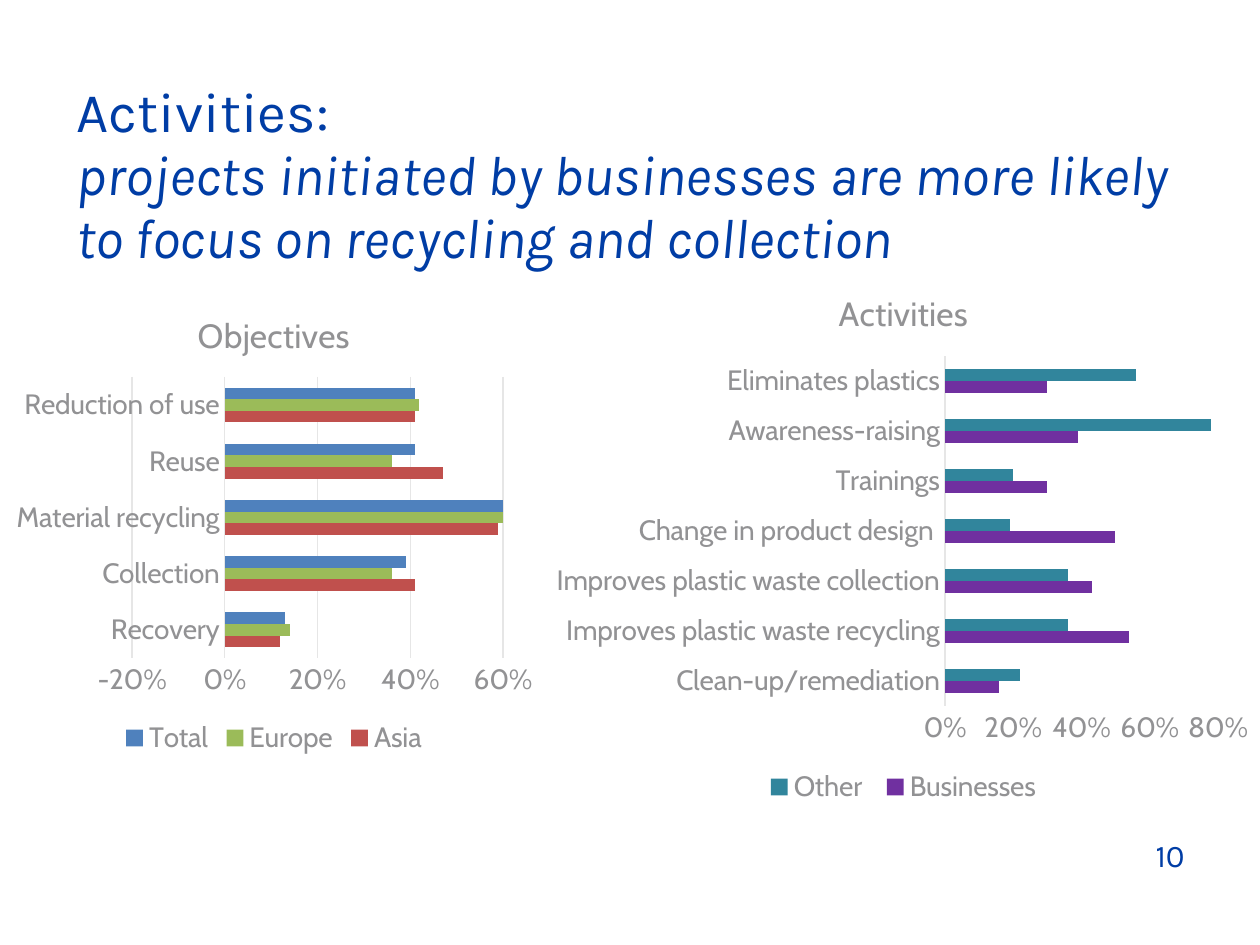
"""Build the slide comparing project objectives and activities in two bar charts."""
from lxml import etree
from pptx import Presentation, util as u
from pptx.chart.data import CategoryChartData
from pptx.dml.color import RGBColor
from pptx.enum import chart as ch, text
from pptx.oxml import ns

PX_PER_INCH = 126
BLUE = RGBColor(0x00, 0x3D, 0xA5)
GREY = RGBColor(0x92, 0x92, 0x94)
RULE = RGBColor(0xE6, 0xE6, 0xE6)
ASIA = RGBColor(0xC0, 0x50, 0x4D)
EUROPE = RGBColor(0x9B, 0xBB, 0x59)
TOTAL = RGBColor(0x4F, 0x81, 0xBD)
BUSINESSES = RGBColor(0x70, 0x30, 0xA0)
OTHER = RGBColor(0x31, 0x85, 0x9C)

OBJECTIVES = dict(
    title="Objectives", box=(5, 290, 538, 470), plot=(132, 377, 371, 281),
    scale=dict(minimum_scale=-0.2, maximum_scale=0.6, major_unit=0.2),
    gap=182, grid=True,
    categories=["Recovery", "Collection", "Material recycling", "Reuse", "Reduction of use"],
    series=[("Asia", ASIA, (0.12, 0.41, 0.59, 0.47, 0.41)),
            ("Europe", EUROPE, (0.14, 0.36, 0.61, 0.36, 0.42)),
            ("Total", TOTAL, (0.13, 0.39, 0.6, 0.41, 0.41))])
ACTIVITIES = dict(
    title="Activities", box=(543, 266, 721, 543), plot=(945, 356, 273, 350),
    scale=dict(minimum_scale=0, maximum_scale=0.8, major_unit=0.2),
    gap=219, grid=False,
    categories=["Clean-up/remediation", "Improves plastic waste recycling",
                "Improves plastic waste collection", "Change in product design ",
                "Trainings", "Awareness-raising", "Eliminates plastics"],
    series=[("Businesses", BUSINESSES, (0.16, 0.54, 0.43, 0.5, 0.3, 0.39, 0.3)),
            ("Other ", OTHER, (0.22, 0.36, 0.36, 0.19, 0.2, 0.78, 0.56))])


def px(length):
    """Turn pixels into EMU."""
    return u.Inches(length / PX_PER_INCH)


def apply(target, values):
    """Set each named attribute on the target."""
    for name, value in values.items():
        setattr(target, name, value)


def set_font(font, name, size, color, **style):
    """Give a font its face, size, colour and style."""
    apply(font, dict(name=name, size=u.Pt(size), **style))
    font.color.rgb = color


def set_line(line, color):
    """Draw a thin line in the given colour."""
    line.color.rgb = color
    line.width = u.Pt(0.75)


def add_title(slide, heading, finding):
    """Fill the title placeholder with a heading and an italic finding."""
    title = slide.shapes.title
    apply(title, dict(left=px(64), top=px(97), width=px(1132), height=px(157)))
    frame = title.text_frame
    apply(frame, dict(word_wrap=True, auto_size=text.MSO_AUTO_SIZE.NONE,
                      vertical_anchor=text.MSO_ANCHOR.MIDDLE))
    paragraph = frame.paragraphs[0]
    apply(paragraph, dict(alignment=text.PP_ALIGN.LEFT, line_spacing=u.Pt(36)))
    for content, italic in ((heading, False), (finding, True)):
        if italic:
            paragraph.add_line_break()
        run = paragraph.add_run()
        run.text = content
        set_font(run.font, "Karla", 32, BLUE, italic=italic)


def add_page_number(slide, number):
    """Place the page number at the lower right."""
    frame = slide.shapes.add_textbox(px(903), px(830), px(294), px(50)).text_frame
    frame.word_wrap = True
    paragraph = frame.paragraphs[0]
    paragraph.alignment = text.PP_ALIGN.RIGHT
    run = paragraph.add_run()
    run.text = number
    set_font(run.font, "Karla", 18, BLUE)


def place_plot(chart, box, plot):
    """Fix the inner plot area inside the chart box."""
    area = chart.element.find(".//" + ns.qn("c:plotArea"))
    for old in area.findall(ns.qn("c:layout")):
        area.remove(old)
    layout = etree.Element(ns.qn("c:layout"))
    manual = etree.SubElement(layout, ns.qn("c:manualLayout"))
    left, top, width, height = box
    values = dict(layoutTarget="inner", xMode="edge", yMode="edge",
                  x=(plot[0] - left) / width, y=(plot[1] - top) / height,
                  w=plot[2] / width, h=plot[3] / height)
    for tag, value in values.items():
        etree.SubElement(manual, ns.qn("c:" + tag)).set("val", str(value))
    area.insert(0, layout)


def format_axes(chart, scale, grid):
    """Style the category and value axes."""
    percent, category = chart.value_axis, chart.category_axis
    for axis in (percent, category):
        apply(axis, dict(major_tick_mark=ch.XL_TICK_MARK.NONE,
                         minor_tick_mark=ch.XL_TICK_MARK.NONE))
        set_font(axis.tick_labels.font, "Cabin", 16, GREY)
    set_line(category.format.line, RULE)
    apply(percent, dict(scale, has_major_gridlines=grid))
    percent.format.line.fill.background()
    apply(percent.tick_labels, dict(number_format="0%", number_format_is_linked=False))
    if grid:
        set_line(percent.major_gridlines.format.line, RULE)


def add_bar_chart(slide, title, box, plot, scale, gap, grid, categories, series):
    """Add a clustered bar chart with title and bottom legend."""
    data = CategoryChartData(number_format="0%")
    data.categories = categories
    for name, _, shares in series:
        data.add_series(name, shares)
    chart = slide.shapes.add_chart(
        ch.XL_CHART_TYPE.BAR_CLUSTERED, *map(px, box), data).chart
    set_font(chart.font, "Cabin", 16, GREY)
    apply(chart, dict(has_title=True, has_legend=True))
    heading = chart.chart_title.text_frame
    heading.text = title
    set_font(heading.paragraphs[0].runs[0].font, "Cabin", 19.2, GREY, bold=False)
    apply(chart.legend, dict(position=ch.XL_LEGEND_POSITION.BOTTOM, include_in_layout=False))
    set_font(chart.legend.font, "Cabin", 16, GREY)
    apply(chart.plots[0], dict(gap_width=gap, overlap=0, vary_by_categories=False))
    for bars, (_, color, _) in zip(chart.plots[0].series, series):
        bars.format.fill.solid()
        bars.format.fill.fore_color.rgb = color
    format_axes(chart, scale, grid)
    place_plot(chart, box, plot)


def main():
    """Build and save the slide."""
    deck = Presentation()
    apply(deck, dict(slide_width=px(1260), slide_height=px(945)))
    slide = deck.slides.add_slide(deck.slide_layouts.get_by_name("Title Only"))
    add_title(slide, "Activities: ",
              "projects initiated by businesses are more likely to focus on "
              "recycling and collection")
    add_page_number(slide, "10")
    for content in (OBJECTIVES, ACTIVITIES):
        add_bar_chart(slide, **content)
    deck.save("out.pptx")


if __name__ == "__main__":
    main()
